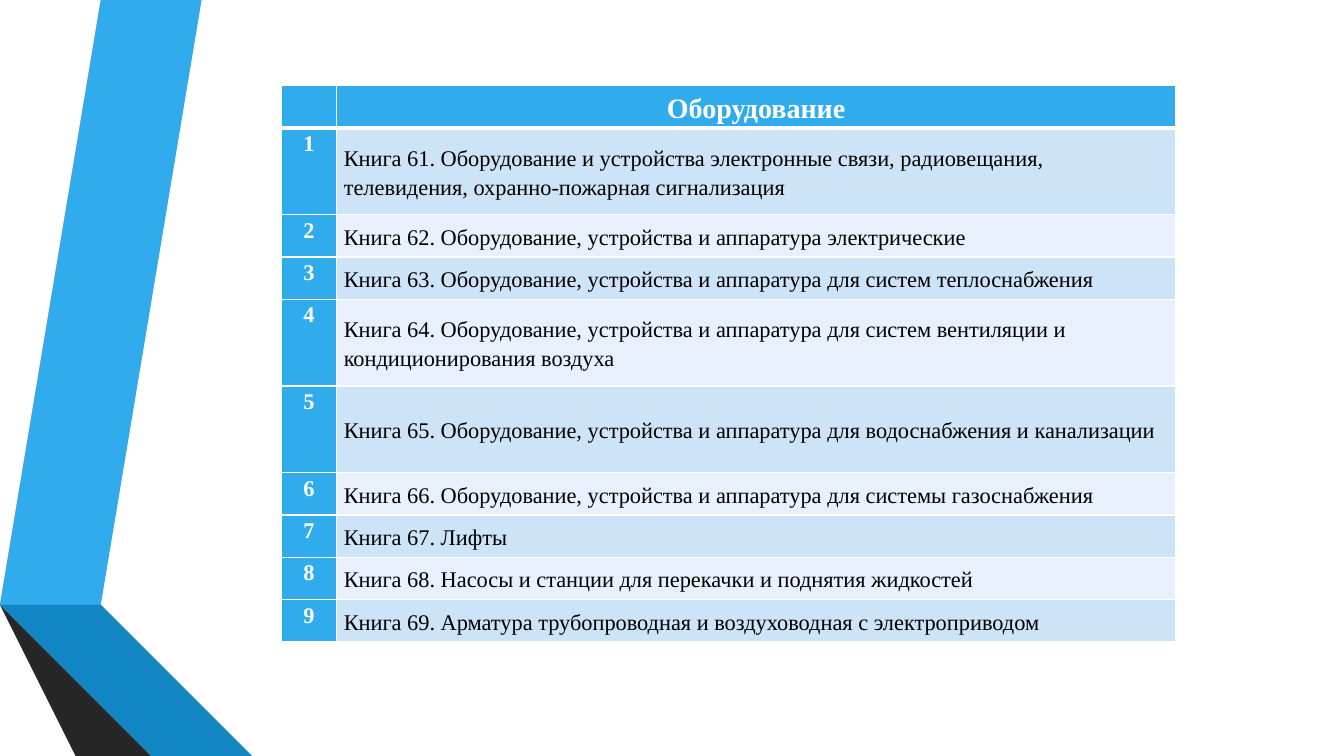
"""Build a slide with a numbered table of equipment price books."""
import pptx
import pptx.dml.color
import pptx.enum.text
import pptx.oxml
import pptx.oxml.ns
import pptx.util

Inches = pptx.util.Inches
Pt = pptx.util.Pt

THEME = {
    "font": "Times New Roman", "header_size": 20, "body_size": 16,
    "accent": "30ACEC", "accent_dark": "1287C3", "accent_deep": "0C5A82",
    "gray": "595959", "gray_dark": "404040", "gray_deep": "262626",
    "odd_row": "CDE3F8", "even_row": "E8F1FB", "white": "FFFFFF", "black": "000000",
}

HEADING = "Оборудование"
SINGLE, DOUBLE = 0.42, 0.86
BOOKS = [
    ("Книга 61. Оборудование и устройства электронные связи, радиовещания, "
     "телевидения, охранно-пожарная сигнализация", DOUBLE),
    ("Книга 62. Оборудование, устройства и аппаратура электрические", SINGLE),
    ("Книга 63. Оборудование, устройства и аппаратура для систем теплоснабжения", SINGLE),
    ("Книга 64. Оборудование, устройства и аппаратура для систем вентиляции и "
     "кондиционирования воздуха", DOUBLE),
    ("Книга 65. Оборудование, устройства и аппаратура для водоснабжения и канализации", DOUBLE),
    ("Книга 66. Оборудование, устройства и аппаратура для системы газоснабжения", SINGLE),
    ("Книга 67. Лифты", SINGLE),
    ("Книга 68. Насосы и станции для перекачки и поднятия жидкостей", SINGLE),
    ("Книга 69. Арматура трубопроводная и воздуховодная с электроприводом", SINGLE),
]
COLUMNS = (0.55, 8.32)
TABLE_LEFT, TABLE_TOP = 2.79, 0.85

RIBBONS = [
    ("accent", [(0.5, 5.78), (0.77, 5.83), (1.73, 0), (1.45, 0)]),
    ("gray", [(1.39, 0), (1.11, 0), (0.16, 5.73), (0.44, 5.77)]),
    ("gray_deep", [(0.16, 5.73), (1.45, 7.5), (1.51, 7.5)]),
    ("accent_deep", [(0.5, 5.79), (2.08, 7.5), (2.14, 7.5)]),
    ("accent_dark", [(0.5, 5.79), (2.14, 7.5), (2.83, 7.5), (0.77, 5.83), (0.5, 5.78)]),
    ("gray_dark", [(2.02, 7.5), (0.48, 5.83), (0.43, 5.78), (0.44, 5.77),
                   (0.16, 5.73), (1.51, 7.5)]),
]


def color(name):
    return pptx.dml.color.RGBColor.from_string(THEME[name])


def draw_ribbon(page, fill, points):
    builder = page.shapes.build_freeform(*points[0], scale=Inches(1))
    builder.add_line_segments(points[1:], close=True)
    ribbon = builder.convert_to_shape()
    ribbon.shadow.inherit = False
    ribbon.fill.solid()
    ribbon.fill.fore_color.rgb = color(fill)
    ribbon.line.fill.background()


def set_borders(cell, widths):
    properties = cell._tc.get_or_add_tcPr()
    for index, (side, width) in enumerate(widths.items()):
        properties.insert(index, pptx.oxml.parse_xml(
            f'<a:ln{side} {pptx.oxml.ns.nsdecls("a")} w="{Pt(width)}"><a:solidFill>'
            f'<a:srgbClr val="{THEME["white"]}"/></a:solidFill></a:ln{side}>'))


def style_cell(cell, text, fill, size, ink, bold, centered, middle, top=1, bottom=1):
    cell.fill.solid()
    cell.fill.fore_color.rgb = color(fill)
    set_borders(cell, {"L": 1, "R": 1, "T": top, "B": bottom})
    cell.margin_left = cell.margin_right = Inches(0.07)
    cell.margin_top = cell.margin_bottom = 0
    anchors = pptx.enum.text.MSO_ANCHOR
    cell.vertical_anchor = anchors.MIDDLE if middle else anchors.TOP
    para = cell.text_frame.paragraphs[0]
    para.text = text
    para.line_spacing = 1.15
    alignments = pptx.enum.text.PP_ALIGN
    para.alignment = alignments.CENTER if centered else alignments.LEFT
    for span in para.runs:
        span.font.name = THEME["font"]
        span.font.size = Pt(THEME[size])
        span.font.bold = bold
        span.font.color.rgb = color(ink)


def draw_table(page):
    heights = [SINGLE] + [height for _, height in BOOKS]
    frame = page.shapes.add_table(
        len(heights), len(COLUMNS), Inches(TABLE_LEFT), Inches(TABLE_TOP),
        Inches(sum(COLUMNS)), Inches(sum(heights)))
    table = frame.table
    for column, width in zip(table.columns, COLUMNS):
        column.width = Inches(width)
    for row, height in zip(table.rows, heights):
        row.height = Inches(height)
    for index, text in enumerate(("", HEADING)):
        style_cell(table.cell(0, index), text, "accent", "header_size", "white",
                   bold=True, centered=True, middle=True, bottom=3)
    for number, (title, _) in enumerate(BOOKS, start=1):
        top = 3 if number == 1 else 1
        style_cell(table.cell(number, 0), str(number), "accent", "body_size", "white",
                   bold=True, centered=True, middle=False, top=top)
        band = "odd_row" if number % 2 else "even_row"
        style_cell(table.cell(number, 1), title, band, "body_size", "black",
                   bold=False, centered=False, middle=True, top=top)


def main():
    deck = pptx.Presentation()
    deck.slide_width, deck.slide_height = Inches(13.33), Inches(7.5)
    page = deck.slides.add_slide(deck.slide_layouts[6])
    for fill, points in RIBBONS:
        draw_ribbon(page, fill, points)
    draw_table(page)
    deck.save("out.pptx")


if __name__ == "__main__":
    main()
